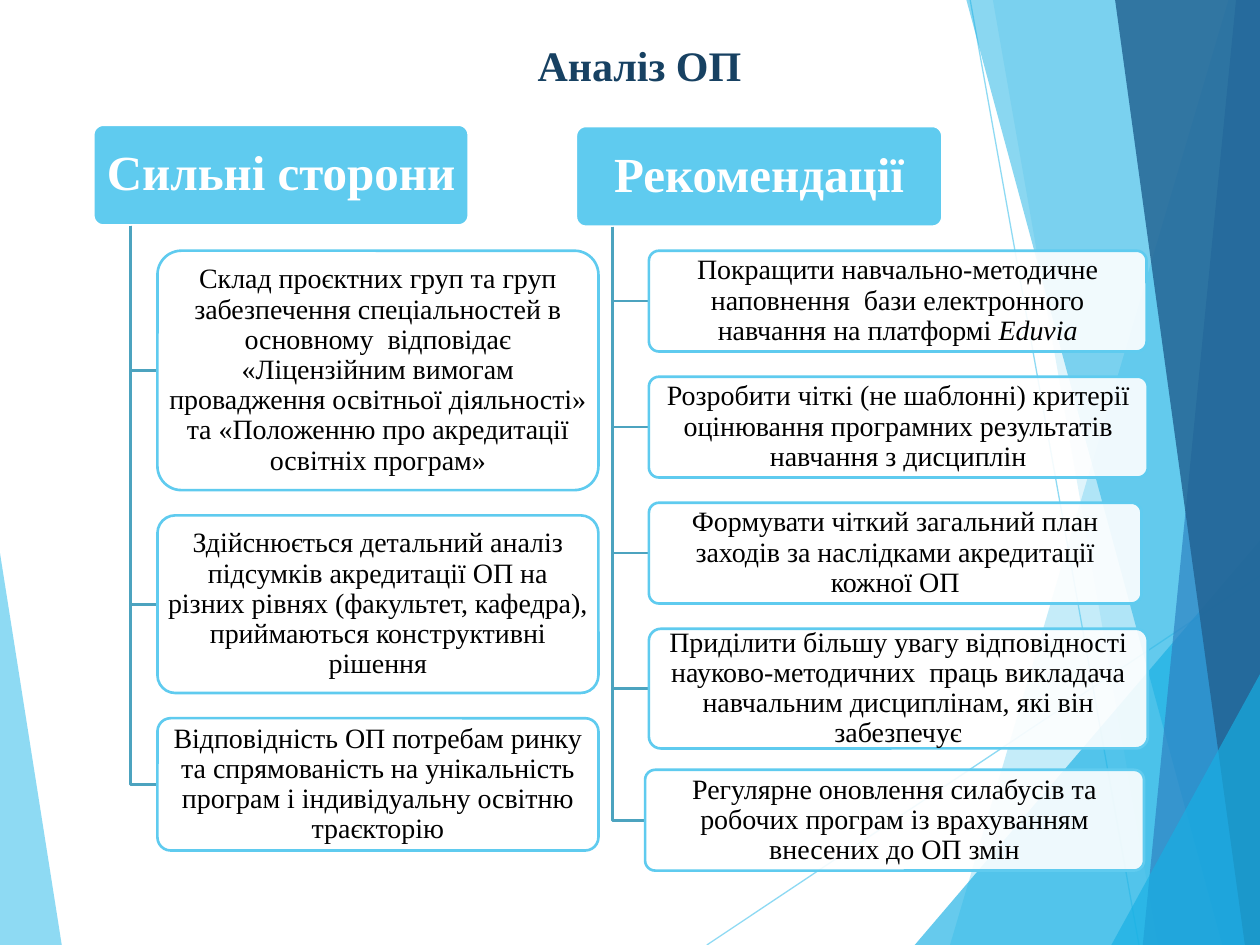
from lxml.etree import SubElement
from pptx import Presentation
from pptx.dml.color import RGBColor
from pptx.enum.shapes import MSO_CONNECTOR, MSO_SHAPE
from pptx.enum.text import MSO_ANCHOR, PP_ALIGN
from pptx.oxml.ns import qn
from pptx.util import Inches, Pt

FONT = "Times New Roman"
COLORS = {
    "sky": "5FCBEF", "cyan": "17B0E4", "blue": "2E83C3", "navy": "226292",
    "title": "174162", "branch": "4CA3BF", "white": "FFFFFF", "black": "000000",
}
TITLE_FORMAT = {"size": Pt(24), "bold": True, "name": FONT}
HEADER_FORMAT = {"size": Pt(28), "bold": True, "name": FONT}
ITEM_FORMAT = {"size": Pt(16), "bold": False, "name": FONT}

# Background: colour, opacity in percent, corner points
LEFT_WEDGE = ("sky", 70, [(0, 4.39), (0.49, 7.5), (0, 7.5)])
RIGHT_PANELS = [
    ("sky", 36, [(9.75, 0), (7.54, 7.5), (10, 7.5), (10, 0)]),
    ("sky", 20, [(7.88, 0), (9.19, 7.5), (10, 7.5), (10, 0)]),
    ("cyan", 66, [(7.26, 7.5), (10, 4.29), (10, 7.5)]),
    ("cyan", 50, [(7.67, 0), (9.7, 7.5), (10, 7.5), (10, 0)]),
    ("blue", 70, [(9.81, 0), (9.07, 7.5), (10, 7.5), (10, 0)]),
    ("navy", 82, [(8.85, 0), (9.88, 7.5), (10, 7.5), (10, 0)]),
    ("cyan", 66, [(8.82, 7.5), (10, 5.35), (10, 7.5)]),
]
THIN_LINES = [((5.61, 7.5), (10, 4.57)), ((7.7, 0), (9.04, 7.5))]

# Columns: each item has width, height, shift from the grid, and text runs
FIRST_TOP, GAP = 1.99, 0.2
COLUMNS = [
    {"header": "Сильні сторони", "at": (0.74, 0.99, 2.98, 0.8), "item_left": 1.25,
     "items": [
         (3.5, 1.9, 0, ["Склад проєктних груп та груп забезпечення спеціальностей в основному  "
                        "відповідає «Ліцензійним вимогам провадження освітньої діяльності» "
                        "та «Положенню про акредитації освітніх програм»"]),
         (3.5, 1.41, 0, ["Здійснюється детальний аналіз підсумків акредитації ОП на різних рівнях "
                         "(факультет, кафедра), приймаються конструктивні рішення"]),
         (3.5, 1.05, 0, ["Відповідність ОП потребам ринку та спрямованість на унікальність "
                         "програм і індивідуальну освітню траєкторію"]),
     ]},
    {"header": "Рекомендації", "at": (4.57, 1, 2.91, 0.8), "item_left": 5.15,
     "items": [
         (3.95, 0.8, 0, ["Покращити навчально-методичне наповнення  бази електронного "
                         "навчання на платформі ", "Eduvia"]),
         (3.96, 0.8, 0, ["Розробити чіткі (не шаблонні) критерії оцінювання програмних "
                         "результатів навчання з дисциплін"]),
         (3.91, 0.8, 0, ["Формувати чіткий загальний план заходів за наслідками "
                         "акредитації кожної ОП"]),
         (3.96, 0.95, 0, ["Приділити більшу увагу відповідності науково-методичних  праць "
                          "викладача навчальним дисциплінам, які він забезпечує"]),
         (3.96, 0.8, -0.03, ["Регулярне оновлення силабусів та робочих програм із врахуванням "
                             "внесених до ОП змін"]),
     ]},
]


def rgb(name):
    return RGBColor.from_string(COLORS[name])


def set_opacity(parent, percent):
    color = parent.find(qn("a:solidFill")).find(qn("a:srgbClr"))
    SubElement(color, qn("a:alpha")).set("val", str(percent * 1000))


def paint(shape, fill, opacity=100, line=None):
    shape.shadow.inherit = False
    shape.fill.solid()
    shape.fill.fore_color.rgb = rgb(fill)
    if opacity < 100:
        set_opacity(shape._element.spPr, opacity)
    if line:
        shape.line.color.rgb = rgb(line)
        shape.line.width = Pt(1.5)
    else:
        shape.line.fill.background()


def write(frame, texts, font_format, color):
    """Write one centred paragraph; any run after the first is italic."""
    frame.word_wrap = True
    frame.vertical_anchor = MSO_ANCHOR.MIDDLE
    para = frame.paragraphs[0]
    para.alignment = PP_ALIGN.CENTER
    para.line_spacing = 0.9
    for index, text in enumerate(texts):
        span = para.add_run()
        span.text = text
        for key, value in font_format.items():
            setattr(span.font, key, value)
        span.font.italic = index > 0
        span.font.color.rgb = rgb(color)


def trace(page, points, close):
    corners = [(Inches(x), Inches(y)) for x, y in points]
    builder = page.shapes.build_freeform(*corners[0])
    builder.add_line_segments(corners[1:], close=close)
    return builder.convert_to_shape()


def add_panel(page, color, opacity, points):
    paint(trace(page, points, True), color, opacity)


def add_thin_line(page, start, end):
    line = page.shapes.add_connector(
        MSO_CONNECTOR.STRAIGHT, *[Inches(value) for value in start + end])
    line.line.color.rgb = rgb("sky")
    line.line.width = Pt(0.75)
    properties = line._element.spPr
    set_opacity(properties.find(qn("a:ln")), 70)
    SubElement(properties, qn("a:effectLst"))


def add_branch(page, points):
    branch = trace(page, points, False)
    branch.shadow.inherit = False
    branch.fill.background()
    branch.line.color.rgb = rgb("branch")
    branch.line.width = Pt(1.5)


def add_box(page, at, inset):
    box = page.shapes.add_shape(MSO_SHAPE.ROUNDED_RECTANGLE, *[Inches(value) for value in at])
    box.adjustments[0] = 0.1
    frame = box.text_frame
    margins = {"margin_left": inset[0], "margin_right": inset[0],
               "margin_top": inset[1], "margin_bottom": inset[1]}
    for key, value in margins.items():
        setattr(frame, key, Inches(value))
    return box


def add_column(page, column):
    left, top, width, height = column["at"]
    header = add_box(page, column["at"], (0.06, 0.04))
    paint(header, "sky", line="white")
    write(header.text_frame, [column["header"]], HEADER_FORMAT, "white")

    trunk, bottom = left + width / 10, top + height
    item_top = FIRST_TOP
    for item_width, item_height, shift, texts in column["items"]:
        box_left, box_top = column["item_left"] + shift, item_top + shift
        middle = box_top + item_height / 2
        add_branch(page, [(trunk, bottom), (trunk, middle), (box_left, middle)])
        box = add_box(page, (box_left, box_top, item_width, item_height), (0.03, 0.02))
        paint(box, "white", 90, "sky")
        write(box.text_frame, texts, ITEM_FORMAT, "black")
        item_top += item_height + GAP


def add_title(page, text):
    title = page.shapes.title
    place = {"left": 0.67, "top": 0.29, "width": 8.81, "height": 0.5}
    for key, value in place.items():
        setattr(title, key, Inches(value))
    write(title.text_frame, [text], TITLE_FORMAT, "title")


def main():
    deck = Presentation()
    deck.slide_width, deck.slide_height = Inches(10), Inches(7.5)
    page = deck.slides.add_slide(deck.slide_layouts[5])

    # Background
    add_panel(page, *LEFT_WEDGE)
    for start, end in THIN_LINES:
        add_thin_line(page, start, end)
    for panel in RIGHT_PANELS:
        add_panel(page, *panel)

    # Content
    add_title(page, "Аналіз ОП")
    for column in COLUMNS:
        add_column(page, column)

    deck.save("out.pptx")


if __name__ == "__main__":
    main()
